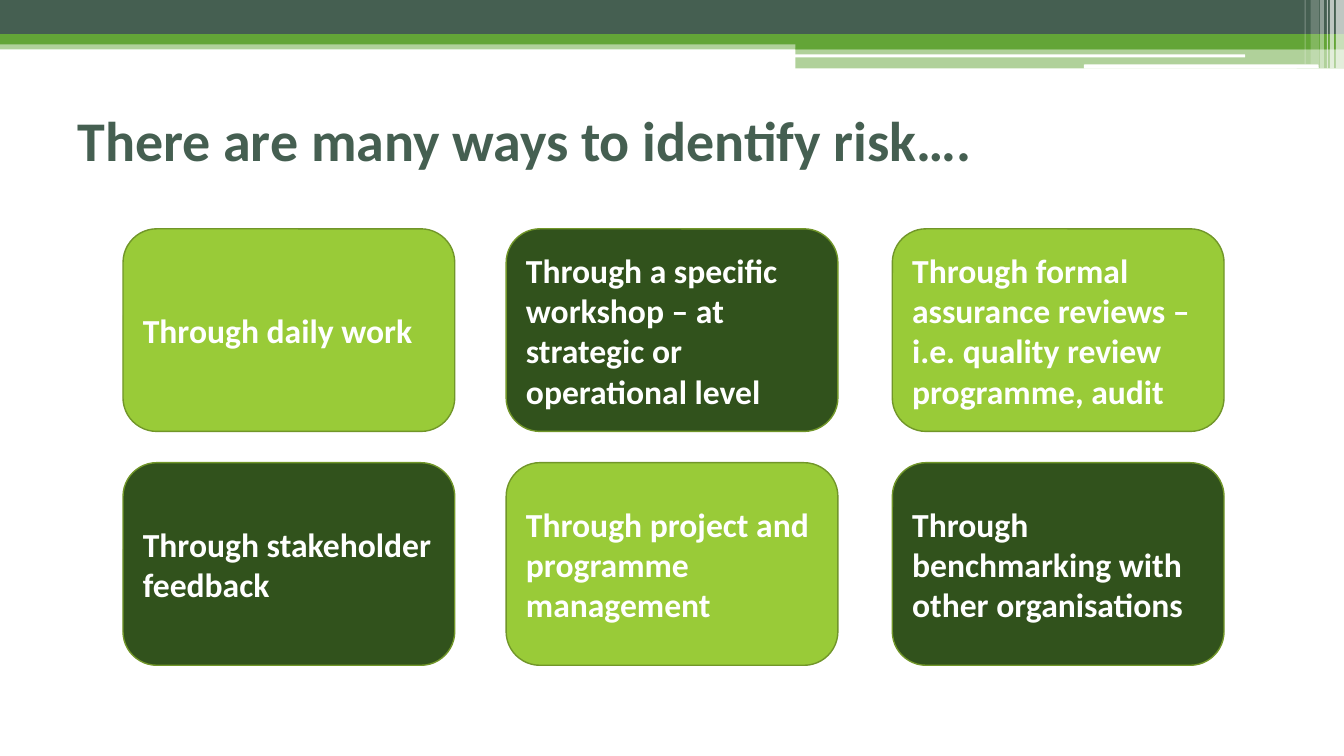
from dataclasses import dataclass

from lxml.etree import SubElement
from pptx import Presentation
from pptx.dml.color import RGBColor
from pptx.enum.shapes import MSO_SHAPE
from pptx.enum.text import MSO_ANCHOR, PP_ALIGN
from pptx.oxml.ns import qn
from pptx.util import Inches, Pt


@dataclass(frozen=True)
class Theme:
    """Colours, font and type sizes of the slide."""
    slate: str = "455F51"
    green: str = "63A537"
    lime: str = "99CB38"
    forest: str = "31521C"
    outline: str = "719629"
    white: str = "FFFFFF"
    font: str = "Calibri"
    title_size: int = 40
    card_size: int = 24


class RiskSlide:
    """Draws styled elements on the current slide."""

    def __init__(self, slide, theme):
        self.slide = slide
        self.theme = theme

    def wording(self, frame, words, size, color):
        """Fill a text frame with one bold, left-aligned paragraph."""
        frame.word_wrap = True
        frame.vertical_anchor = MSO_ANCHOR.MIDDLE
        paragraph = frame.paragraphs[0]
        paragraph.alignment = PP_ALIGN.LEFT
        run = paragraph.add_run()
        run.text = words
        formats = {"name": self.theme.font, "size": Pt(size), "bold": True}
        for attribute, value in formats.items():
            setattr(run.font, attribute, value)
        run.font.color.rgb = RGBColor.from_string(color)

    def panel(self, kind, box, color):
        """Add a plain filled shape without outline or shadow."""
        panel = self.slide.shapes.add_shape(kind, *map(Inches, box))
        panel.shadow.inherit = False
        panel.fill.solid()
        panel.fill.fore_color.rgb = RGBColor.from_string(color)
        panel.line.fill.background()
        return panel

    def band(self, box, color, opacity=100, kind=MSO_SHAPE.RECTANGLE):
        """Add one strip of the header, see-through below full opacity."""
        band = self.panel(kind, box, color)
        if opacity < 100:
            tint = band.element.spPr.find(f"{qn('a:solidFill')}/{qn('a:srgbClr')}")
            SubElement(tint, qn("a:alpha"), val=str(opacity * 1000))

    def title(self, box, words):
        """Add the slide title."""
        title = self.slide.shapes.add_textbox(*map(Inches, box))
        self.wording(title.text_frame, words, self.theme.title_size, self.theme.slate)

    def card(self, box, words, color):
        """Add a rounded card holding one way to identify risk."""
        card = self.panel(MSO_SHAPE.FLOWCHART_ALTERNATE_PROCESS, box, color)
        card.line.color.rgb = RGBColor.from_string(self.theme.outline)
        card.line.width = Pt(1)
        self.wording(card.text_frame, words, self.theme.card_size, self.theme.white)


def main():
    """Build and save the slide."""
    deck = Presentation()
    deck.slide_width, deck.slide_height = Inches(13.33), Inches(7.5)
    theme = Theme()
    page = RiskSlide(deck.slides.add_slide(deck.slide_layouts[6]), theme)

    header_bands = [
        ((0, 0.4, 13.33, 0.09), theme.green, 50),
        ((0, 0, 13.33, 0.34), theme.slate, 100),
        ((0, 0.34, 13.33, 0.1), theme.green, 100),
        ((7.89, 0.39, 5.44, 0.1), theme.green, 100),
        ((7.89, 0.48, 5.44, 0.2), theme.green, 50),
    ]
    for box, color, opacity in header_bands:
        page.band(box, color, opacity)

    for box in [(7.88, 0.54, 4.47, 0.03), (10.75, 0.64, 2.33, 0.04)]:
        page.band(box, theme.white, kind=MSO_SHAPE.ROUNDED_RECTANGLE)

    edge_stripes = [
        (13.25, 0.08, 0.68, 65),
        (13.19, 0.04, 0.68, 65),
        (13.16, 0.01, 0.68, 60),
        (13.09, 0.04, 0.68, 40),
        (13, 0.08, 0.64, 20),
        (12.94, 0.01, 0.64, 30),
    ]
    for left, width, height, opacity in edge_stripes:
        page.band((left, 0, width, height), theme.white, opacity)

    page.title((0.67, 0.8, 12, 1.17), "There are many ways to identify risk….")

    ways = [
        ["Through daily work",
         "Through a specific workshop – at strategic or operational level",
         "Through formal assurance reviews – i.e. quality review programme, audit"],
        ["Through stakeholder feedback",
         "Through project and programme management",
         "Through benchmarking with other organisations"],
    ]
    card_colors = [theme.lime, theme.forest]
    for row, (top, row_ways) in enumerate(zip([2.27, 4.59], ways)):
        for column, (left, way) in enumerate(zip([1.22, 5.02, 8.85], row_ways)):
            page.card((left, top, 3.29, 2.01), way, card_colors[(row + column) % 2])

    deck.save("out.pptx")


if __name__ == "__main__":
    main()
